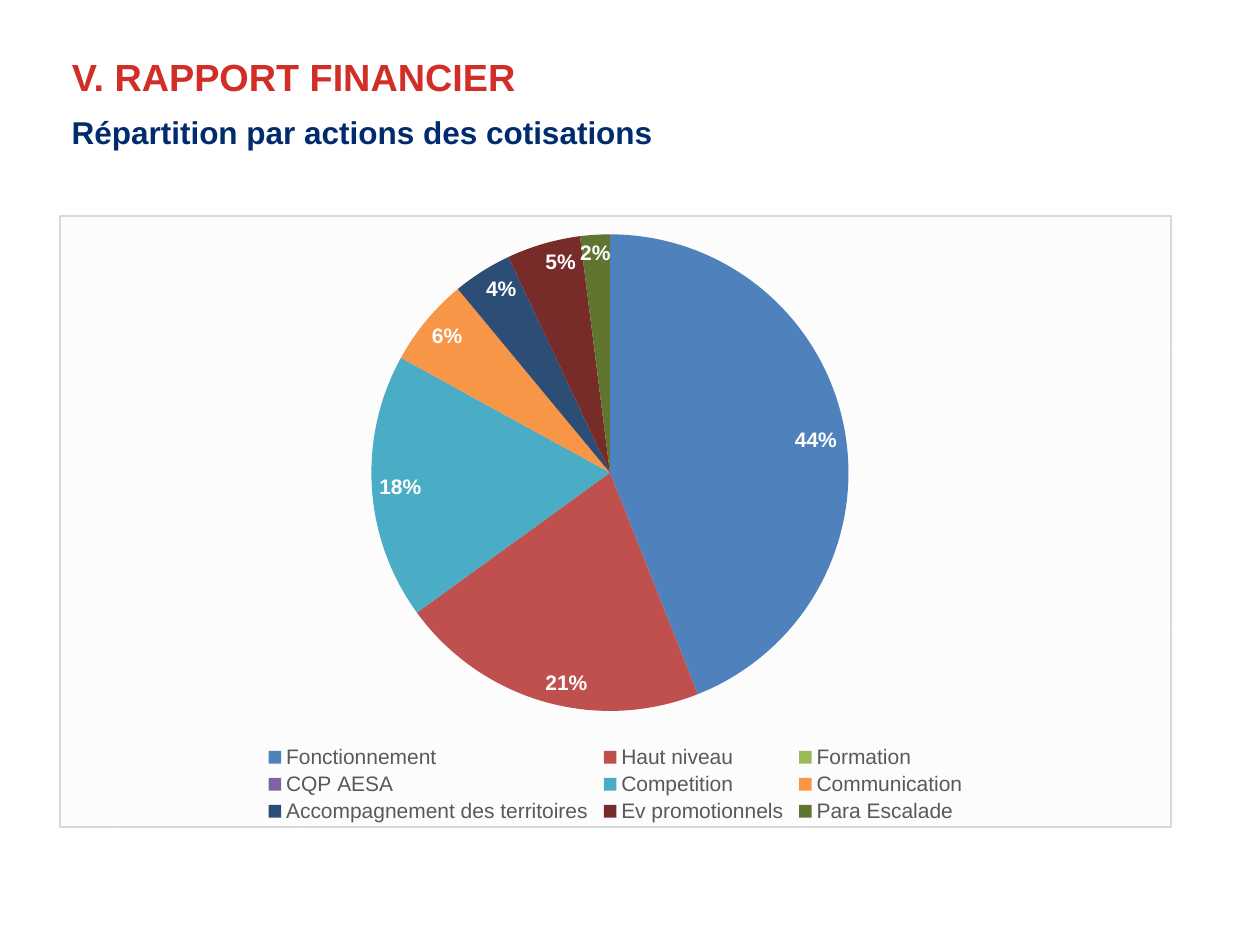
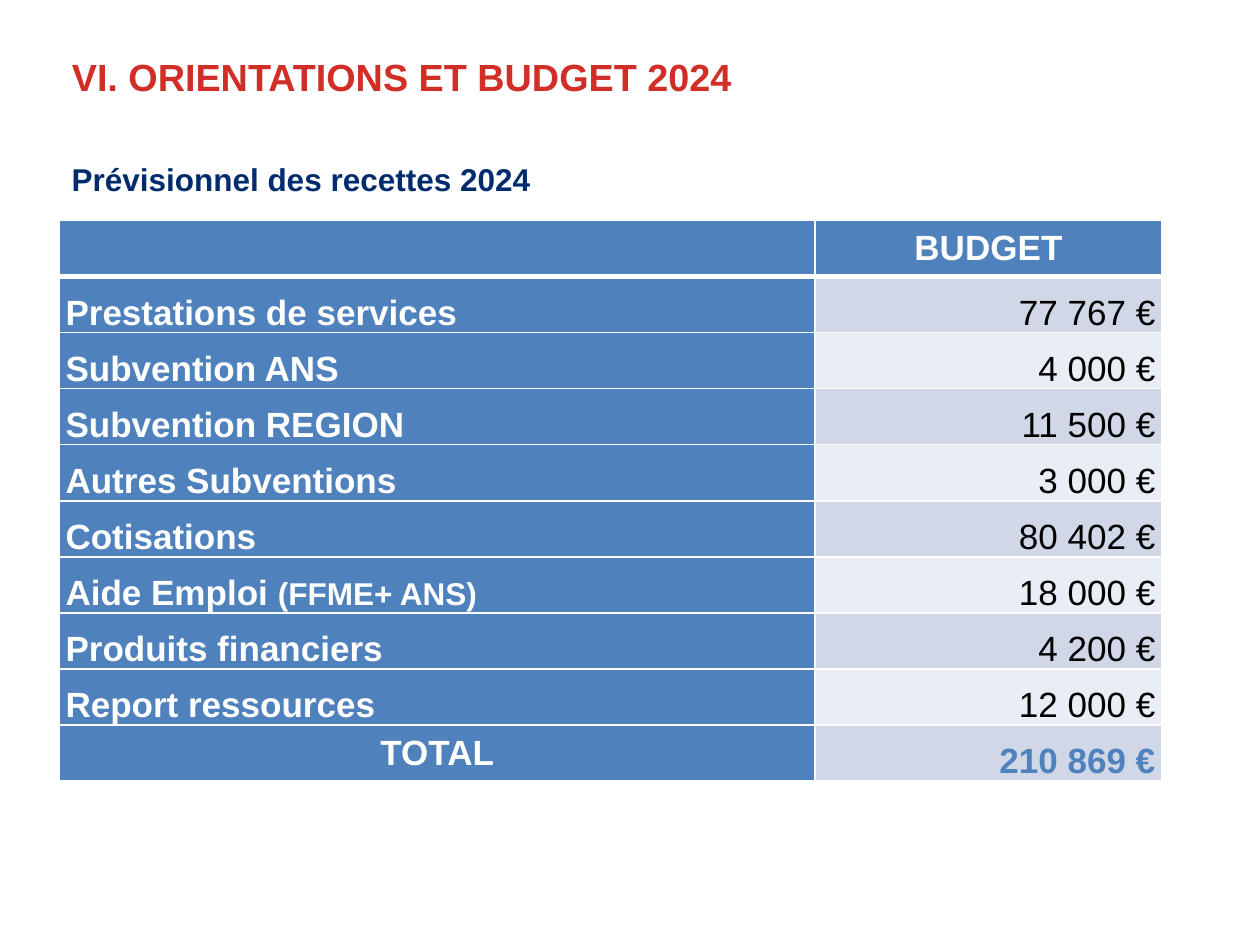
from lxml import etree
from pptx import Presentation
from pptx.chart.data import CategoryChartData
from pptx.dml.color import RGBColor
from pptx.enum import chart as charts, text
from pptx.oxml import ns, parse_xml
from pptx.util import Inches, Pt

FONT = "Arial"
RED, NAVY, BLUE, WHITE, BLACK = "D02E26", "002C6E", "4F81BD", "FFFFFF", "000000"
GREY, BORDER, HATCH = "595959", "D9D9D9", "F2F2F2"
BANDS = ["D0D8E8", "E9EDF4"]
SLICE_COLOURS = [BLUE, "C0504D", "9BBB59", "8064A2", "4BACC6",
                 "F79646", "2C4D75", "772C2A", "5F7530"]
LEFT, WIDTH = 0.47, 8.75

ACTIONS = [
    ("Fonctionnement", 44), ("Haut niveau ", 21), ("Formation", 0),
    ("CQP AESA", 0), ("Competition", 18), ("Communication", 6),
    ("Accompagnement des territoires", 4), ("Ev promotionnels", 5),
    ("Para Escalade", 2),
]
RECEIPTS = [
    ("Prestations de services", "77 767 €"),
    ("Subvention ANS", "4 000 €"),
    ("Subvention REGION", "11 500 €"),
    ("Autres Subventions", "3 000 €"),
    ("Cotisations", "80 402 €"),
    ("Aide Emploi ", "18 000 €"),
    ("Produits financiers", "4 200 €"),
    ("Report ressources", "12 000 €"),
]
EMPLOYMENT_NOTE = {"Aide Emploi ": "(FFME+ ANS)"}


def rgb(colour):
    return RGBColor.from_string(colour)


def style(font, size, colour, bold=False):
    font.name, font.size, font.bold = FONT, Pt(size), bold
    font.color.rgb = rgb(colour)


def add_run(paragraph, wording, size, colour, bold=False):
    run = paragraph.add_run()
    run.text = wording
    style(run.font, size, colour, bold)


def add_heading(slide, title, subtitle, subtitle_top):
    heading = slide.shapes.title
    heading.left, heading.top = Inches(LEFT), Inches(0.38)
    heading.width, heading.height = Inches(WIDTH), Inches(0.45)
    subheading = slide.shapes.add_textbox(
        Inches(LEFT), Inches(subtitle_top), Inches(WIDTH), Inches(0.42))
    for box, wording, size, colour, anchor in (
            (heading, title, 21.6, RED, text.MSO_ANCHOR.MIDDLE),
            (subheading, subtitle, 18, NAVY, text.MSO_ANCHOR.TOP)):
        frame = box.text_frame
        frame.word_wrap = True
        frame.auto_size = text.MSO_AUTO_SIZE.NONE
        frame.vertical_anchor = anchor
        frame.paragraphs[0].alignment = text.PP_ALIGN.LEFT
        add_run(frame.paragraphs[0], wording, size, colour, True)


def chart_layout(x, y, w, h, inner=False):
    """Manual layout element, as fractions of the chart area."""
    target = '<c:layoutTarget val="inner"/>' if inner else ""
    return parse_xml(
        f'<c:layout {ns.nsdecls("c")}><c:manualLayout>{target}'
        '<c:xMode val="edge"/><c:yMode val="edge"/>'
        f'<c:x val="{x}"/><c:y val="{y}"/><c:w val="{w}"/><c:h val="{h}"/>'
        '</c:manualLayout></c:layout>')


def hatch_chart_area(chart):
    area = parse_xml(
        f'<c:spPr {ns.nsdecls("c", "a")}><a:pattFill prst="dkDnDiag">'
        f'<a:fgClr><a:srgbClr val="{HATCH}"/></a:fgClr>'
        f'<a:bgClr><a:srgbClr val="{WHITE}"/></a:bgClr></a:pattFill>'
        f'<a:ln w="{Pt(0.75)}"><a:solidFill><a:srgbClr val="{BORDER}"/>'
        '</a:solidFill></a:ln></c:spPr>')
    chart.element.find(ns.qn("c:chart")).addnext(area)


def hide_label(labels, position, index):
    labels.element.insert(position, parse_xml(
        f'<c:dLbl {ns.nsdecls("c")}><c:idx val="{index}"/>'
        '<c:delete val="1"/></c:dLbl>')) if hasattr(labels, "element") else \
        labels._element.insert(position, parse_xml(
            f'<c:dLbl {ns.nsdecls("c")}><c:idx val="{index}"/>'
            '<c:delete val="1"/></c:dLbl>'))


def add_actions_pie(slide, left, top, width, height):
    data = CategoryChartData()
    data.categories = [action for action, _ in ACTIONS]
    data.add_series("Series 1", [share for _, share in ACTIONS])
    pie = slide.shapes.add_chart(
        charts.XL_CHART_TYPE.PIE, Inches(left), Inches(top),
        Inches(width), Inches(height), data).chart
    pie.has_title = False
    style(pie.font, 10, BLACK)
    hatch_chart_area(pie)

    plot_area = pie.element.find(".//" + ns.qn("c:plotArea"))
    for automatic in plot_area.findall(ns.qn("c:layout")):
        plot_area.remove(automatic)
    plot_area.insert(0, chart_layout(0.28, 0.03, 0.43, 0.78, inner=True))

    pie.has_legend = True
    pie.legend.position = charts.XL_LEGEND_POSITION.BOTTOM
    pie.legend.include_in_layout = False
    style(pie.legend.font, 12, GREY)
    legend_position = pie.element.find(".//" + ns.qn("c:legendPos"))
    for automatic in legend_position.getparent().findall(ns.qn("c:layout")):
        legend_position.getparent().remove(automatic)
    legend_position.addnext(chart_layout(0.18, 0.86, 0.64, 0.14))

    pie.plots[0].vary_by_categories = True
    shares = pie.plots[0].series[0]
    for index, colour in enumerate(SLICE_COLOURS):
        fill = shares.points[index].format.fill
        fill.solid()
        fill.fore_color.rgb = rgb(colour)
    labels = shares.data_labels
    labels.show_percentage, labels.show_value = True, False
    labels.number_format, labels.number_format_is_linked = "0%", False
    labels.position = charts.XL_LABEL_POSITION.INSIDE_END
    style(labels.font, 12, WHITE, True)
    empty = [i for i, (_, share) in enumerate(ACTIONS) if share == 0]
    for position, index in enumerate(empty):
        hide_label(labels, position, index)


def set_borders(cell, top, bottom):
    """White cell borders; top and bottom widths are in points."""
    properties = cell._tc.get_or_add_tcPr()
    for position, (side, width) in enumerate(
            (("L", 1), ("R", 1), ("T", top), ("B", bottom))):
        properties.insert(position, parse_xml(
            f'<a:ln{side} {ns.nsdecls("a")} w="{Pt(width)}"><a:solidFill>'
            f'<a:srgbClr val="{WHITE}"/></a:solidFill></a:ln{side}>'))


def format_cell(cell, row, fill, align, anchor):
    cell.fill.solid()
    cell.fill.fore_color.rgb = rgb(fill)
    cell.margin_left = cell.margin_right = Inches(0.05)
    cell.margin_top = cell.margin_bottom = 0
    cell.vertical_anchor = anchor
    cell.text_frame.paragraphs[0].alignment = align
    set_borders(cell, 3 if row == 1 else 1, 3 if row == 0 else 1)


def add_receipts_table(slide, left, top, width, height):
    lines = [("", "BUDGET"), *RECEIPTS, ("TOTAL", "210 869 €")]
    last = len(lines) - 1
    table = slide.shapes.add_table(
        len(lines), 2, Inches(left), Inches(top),
        Inches(width), Inches(height)).table
    table.columns[0].width = Inches(6)
    table.columns[1].width = Inches(width - 6)
    align, anchor = text.PP_ALIGN, text.MSO_ANCHOR
    for row, (source, amount) in enumerate(lines):
        table.rows[row].height = Inches(height / len(lines))
        header, total = row == 0, row == last
        source_cell, amount_cell = table.cell(row, 0), table.cell(row, 1)
        format_cell(source_cell, row, BLUE,
                    align.CENTER if total else align.LEFT,
                    anchor.MIDDLE if total else anchor.BOTTOM)
        format_cell(amount_cell, row, BLUE if header else BANDS[(row - 1) % 2],
                    align.CENTER if header else align.RIGHT,
                    anchor.MIDDLE if header else anchor.BOTTOM)
        source_line = source_cell.text_frame.paragraphs[0]
        if source:
            add_run(source_line, source, 20, WHITE, True)
        if source in EMPLOYMENT_NOTE:
            add_run(source_line, EMPLOYMENT_NOTE[source], 18, WHITE, True)
        amount_colour = WHITE if header else BLUE if total else BLACK
        add_run(amount_cell.text_frame.paragraphs[0], amount, 20,
                amount_colour, header or total)


def main():
    deck = Presentation()
    deck.slide_width, deck.slide_height = Inches(10), Inches(7.5)
    title_only = deck.slide_layouts[5]

    report = deck.slides.add_slide(title_only)
    add_actions_pie(report, LEFT, 1.71, 8.83, 4.86)
    add_heading(report, "V. RAPPORT FINANCIER",
                "Répartition par actions des cotisations", 0.85)

    budget = deck.slides.add_slide(title_only)
    add_receipts_table(budget, LEFT, 1.75, WIDTH, 4.45)
    add_heading(budget, "VI. ORIENTATIONS ET BUDGET 2024",
                "Prévisionnel des recettes 2024", 1.22)
    deck.save("out.pptx")


if __name__ == "__main__":
    main()
